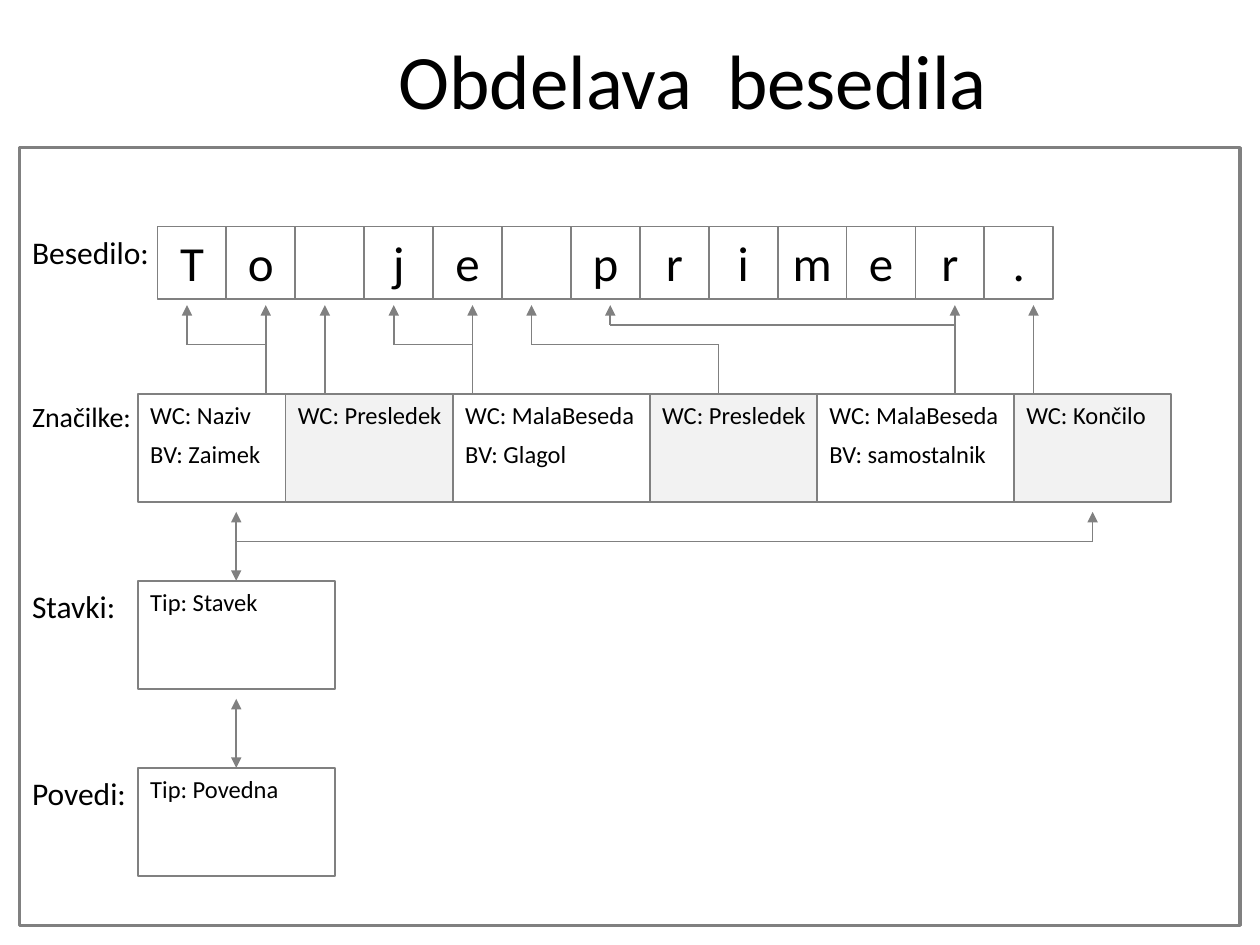
"""Build a slide showing how a sentence passes through the stages of text processing."""
from itertools import pairwise

from pptx import Presentation, util as u
from pptx.dml.color import RGBColor
from pptx.enum import shapes, text
from pptx.oxml.ns import qn
from lxml import etree

THEME = {
    "font": "Calibri", "ink": RGBColor(0, 0, 0), "line": RGBColor(128, 128, 128),
    "paper": RGBColor(255, 255, 255), "shade": RGBColor(242, 242, 242),
    "title": 44, "letter": 28, "label": 18, "small_label": 16, "tag": 14,
}

deck = Presentation()
deck.slide_width, deck.slide_height = u.Inches(10), u.Inches(7.5)
UNIT = deck.slide_width / 128
slide = deck.slides.add_slide(deck.slide_layouts[5])


def write(holder, words, size, align=text.PP_ALIGN.LEFT, anchor=text.MSO_ANCHOR.TOP):
    frame = holder.text_frame
    frame.word_wrap = True
    frame.vertical_anchor = anchor
    paragraph = frame.paragraphs[0]
    paragraph.alignment = align
    run = paragraph.add_run()
    run.text = words
    run.font.size = u.Pt(THEME[size])
    run.font.name = THEME["font"]
    run.font.color.rgb = THEME["ink"]


def box(col, row, cols, rows, fill=None, weight=1):
    area = slide.shapes.add_shape(
        shapes.MSO_SHAPE.RECTANGLE, *(round(n * UNIT) for n in (col, row, cols, rows)))
    area.shadow.inherit = False
    if fill:
        area.fill.solid()
        area.fill.fore_color.rgb = THEME[fill]
    else:
        area.fill.background()
    area.line.color.rgb = THEME["line"]
    area.line.width = u.Pt(weight)
    return area


title = slide.shapes.title
title.left, title.top = round(12.8 * UNIT), 0
title.width, title.height = round(115.2 * UNIT), 16 * round(UNIT)
write(title, "Obdelava  besedila", "title", text.PP_ALIGN.CENTER, text.MSO_ANCHOR.MIDDLE)

box(2, 15, 124, 79, "paper", 2)

for place, letter in enumerate("To je primer."):
    cell = box(16 + 7 * place, 23, 7, 7.35)
    if letter != " ":
        write(cell, letter, "letter", text.PP_ALIGN.CENTER)

tokens = [
    (15, "paper"), (17, "shade"), (20, "paper"),
    (17, "shade"), (20, "paper"), (16, "shade"),
]
col = 14
for cols, fill in tokens:
    box(col, 40, cols, 11, fill)
    col += cols

clause, sentence = (box(14, row, 20, 11, "paper") for row in (59, 78))

captions = [
    (2, 23, 15, "Besedilo:", "label"), (2, 40, 13, "Značilke:", "small_label"),
    (2, 59, 13, "Stavki:", "label"), (2, 78, 13, "Povedi:", "label"),
    (14, 40, 20, "WC: Naziv", "tag"), (14, 44, 15, "BV: Zaimek", "tag"),
    (29, 40, 18, "WC: Presledek", "tag"),
    (46, 40, 20, "WC: MalaBeseda", "tag"), (46, 44, 20, "BV: Glagol", "tag"),
    (66, 40, 20, "WC: Presledek", "tag"),
    (83, 40, 21, "WC: MalaBeseda", "tag"), (83, 44, 20, "BV: samostalnik", "tag"),
    (103, 40, 16, "WC: Končilo", "tag"),
    (14, 59, 20, "Tip: Stavek", "tag"), (14, 78, 20, "Tip: Povedna", "tag"),
]
for col, row, cols, words, size in captions:
    height = u.Inches(0.1 + 1.22 * THEME[size] / 72)
    caption = slide.shapes.add_textbox(
        round(col * UNIT), round(row * UNIT), round(cols * UNIT), height)
    write(caption, words, size)

routes = [
    ([(27, 40), (27, 31)], None), ([(27, 35), (19, 35), (19, 31)], None),
    ([(33, 40), (33, 31)], None),
    ([(48, 40), (48, 31)], None), ([(48, 35), (40, 35), (40, 31)], None),
    ([(73, 40), (73, 35), (54, 35), (54, 31)], None),
    ([(97, 40), (97, 31)], None), ([(97, 33), (62, 33), (62, 31)], None),
    ([(105, 40), (105, 31)], None),
    ([(24, 78), (24, 71)], sentence), ([(24, 59), (24, 52)], clause),
    ([(24, 55), (111, 55), (111, 52)], None),
]
for points, source in routes:
    for start, end in pairwise(points):
        link = slide.shapes.add_connector(
            shapes.MSO_CONNECTOR.STRAIGHT, *(round(n * UNIT) for n in start + end))
        link.line.color.rgb = THEME["line"]
        link.line.width = u.Pt(1)
        properties = link._element.spPr
        etree.SubElement(properties, qn("a:effectLst"))
        stroke = properties.find(qn("a:ln"))
        if source:
            link.begin_connect(source, 0)
            etree.SubElement(stroke, qn("a:headEnd"), type="triangle")
        if end == points[-1]:
            etree.SubElement(stroke, qn("a:tailEnd"), type="triangle")

deck.save("out.pptx")
